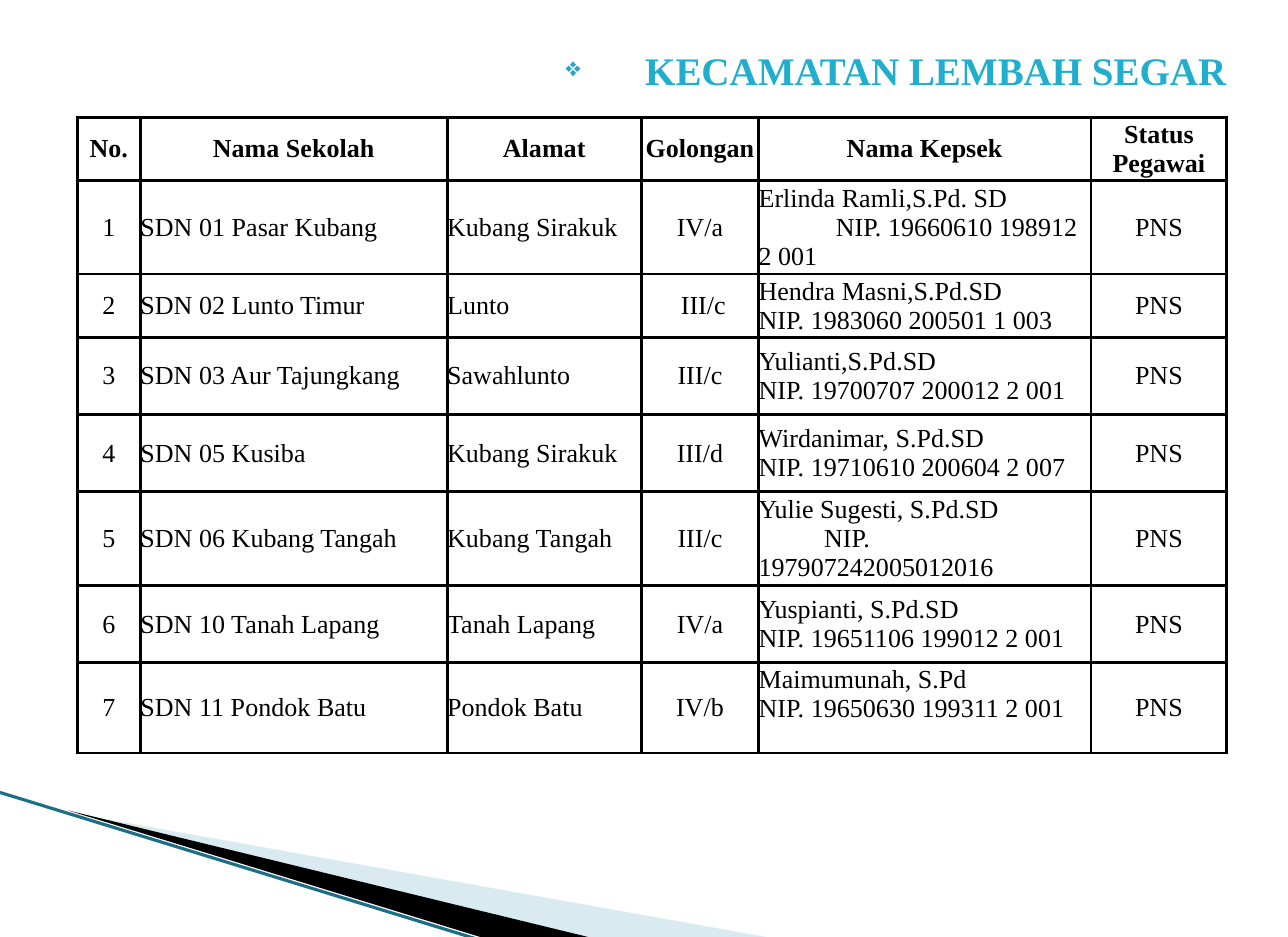
from lxml import etree
from pptx import Presentation
from pptx.dml.color import RGBColor
from pptx.enum.shapes import MSO_CONNECTOR
from pptx.enum.text import MSO_ANCHOR, PP_ALIGN
from pptx.oxml.ns import qn
from pptx.util import Inches, Pt

LEFT, CENTER, RIGHT = PP_ALIGN.LEFT, PP_ALIGN.CENTER, PP_ALIGN.RIGHT
MIDDLE = MSO_ANCHOR.MIDDLE
STRAIGHT = MSO_CONNECTOR.STRAIGHT

FONT = "Times New Roman"
COLORS = {
    "title": "1FAECD",
    "bullet": "2DA2BF",
    "text": "000000",
    "border": "000000",
    "pale_wedge": "A0CBDC",
    "dark_wedge": "000000",
    "edge": "1C6E87",
}

TITLE = "KECAMATAN LEMBAH SEGAR"
HEADERS = ["No.", "Nama Sekolah", "Alamat", "Golongan", "Nama Kepsek", "Status Pegawai"]
STATUS = "PNS"
SCHOOLS = [
    ("SDN 01 Pasar Kubang", "Kubang Sirakuk", "IV/a", "Erlinda Ramli,S.Pd. SD", "NIP. 19660610 198912 2 001"),
    ("SDN 02 Lunto Timur", "Lunto", " III/c", "Hendra Masni,S.Pd.SD", "NIP. 1983060 200501 1 003"),
    ("SDN 03 Aur Tajungkang", "Sawahlunto", "III/c", "Yulianti,S.Pd.SD", "NIP. 19700707 200012 2 001"),
    ("SDN 05 Kusiba", "Kubang Sirakuk", "III/d", "Wirdanimar, S.Pd.SD", "NIP. 19710610 200604 2 007"),
    ("SDN 06 Kubang Tangah", "Kubang Tangah", "III/c", "Yulie Sugesti, S.Pd.SD", "NIP. 197907242005012016"),
    ("SDN 10 Tanah Lapang", "Tanah Lapang", "IV/a", "Yuspianti, S.Pd.SD", "NIP. 19651106 199012 2 001"),
    ("SDN 11 Pondok Batu", "Pondok Batu", "IV/b", "Maimumunah, S.Pd", "NIP. 19650630 199311 2 001"),
]
NIP_INDENTS = {1: 0.33, 5: 0.28}
BOTTOM_MARGINS = {7: 0.12}
COLUMN_WIDTHS = [0.27, 1.31, 0.83, 0.5, 1.42, 0.58]
ROW_HEIGHTS = [0.27, 0.4, 0.27, 0.33, 0.33, 0.38, 0.33, 0.37]
COLUMN_ALIGNMENTS = [CENTER, LEFT, LEFT, CENTER, LEFT, CENTER]
HEAD_COLUMN = 4

WEDGES = [
    ("pale_wedge", 40, [(0.3, 3.47), (3.27, 4), (2.51, 4)]),
    ("dark_wedge", 100, [(0.29, 3.46), (2.51, 4), (2.05, 4)]),
]
EDGE = [(-0.01, 3.38), (2.04, 4.01)]


def rgb(name):
    return RGBColor.from_string(COLORS[name])


def write(frame, text, size=8, color="text", bold=False, align=LEFT, margins=(0, 0, 0, 0),
          indent=0, hanging=0, bullet=None):
    frame.word_wrap = True
    frame.margin_left, frame.margin_top, frame.margin_right, frame.margin_bottom = map(Inches, margins)
    for index, line in enumerate(text.split("\n")):
        paragraph = frame.add_paragraph() if index else frame.paragraphs[0]
        properties = paragraph._p.get_or_add_pPr()
        if indent and index:
            properties.set("indent", str(Inches(indent)))
        if bullet:
            properties.set("marL", str(Inches(hanging)))
            properties.set("indent", str(-Inches(hanging)))
            bullet_color = etree.SubElement(properties, qn("a:buClr"))
            etree.SubElement(bullet_color, qn("a:srgbClr"), val=COLORS["bullet"])
            etree.SubElement(properties, qn("a:buSzPct"), val="68000")
            etree.SubElement(properties, qn("a:buChar"), char=bullet)
        paragraph.alignment = align
        run = paragraph.add_run()
        run.text = line
        run.font.name = FONT
        run.font.size = Pt(size)
        run.font.bold = bold
        run.font.color.rgb = rgb(color)


def add_borders(cell):
    properties = cell._tc.get_or_add_tcPr()
    for side in ("lnL", "lnR", "lnT", "lnB"):
        border = etree.SubElement(properties, qn(f"a:{side}"), w=str(Pt(1)))
        fill = etree.SubElement(border, qn("a:solidFill"))
        etree.SubElement(fill, qn("a:srgbClr"), val=COLORS["border"])


def add_wedge(slide, color, opacity, points):
    corners = [(Inches(x), Inches(y)) for x, y in points]
    builder = slide.shapes.build_freeform(*corners[0])
    builder.add_line_segments(corners[1:])
    wedge = builder.convert_to_shape()
    wedge.shadow.inherit = False
    wedge.line.fill.background()
    wedge.fill.solid()
    wedge.fill.fore_color.rgb = rgb(color)
    if opacity < 100:
        fill_color = wedge._element.spPr.find(".//" + qn("a:srgbClr"))
        etree.SubElement(fill_color, qn("a:alpha"), val=str(opacity * 1000))


def add_edge(slide):
    (x1, y1), (x2, y2) = EDGE
    edge = slide.shapes.add_connector(STRAIGHT, Inches(x1), Inches(y1), Inches(x2), Inches(y2))
    edge.line.color.rgb = rgb("edge")
    edge.line.width = Pt(0.95)
    etree.SubElement(edge._element.spPr, qn("a:effectLst"))


def add_school_table(slide):
    rows = [HEADERS]
    for number, (school, address, grade, head, nip) in enumerate(SCHOOLS, 1):
        rows.append([str(number), school, address, grade, f"{head}\n{nip}", STATUS])
    table = slide.shapes.add_table(
        len(rows), len(HEADERS), Inches(0.33), Inches(0.5),
        Inches(sum(COLUMN_WIDTHS)), Inches(sum(ROW_HEIGHTS))).table
    table.first_row = table.horz_banding = False
    for column, width in zip(table.columns, COLUMN_WIDTHS):
        column.width = Inches(width)
    for row_index, (values, height) in enumerate(zip(rows, ROW_HEIGHTS)):
        table.rows[row_index].height = Inches(height)
        is_header = row_index == 0
        for column_index, value in enumerate(values):
            cell = table.cell(row_index, column_index)
            add_borders(cell)
            cell.fill.background()
            cell.vertical_anchor = MIDDLE
            write(cell.text_frame, value, bold=is_header,
                  align=CENTER if is_header else COLUMN_ALIGNMENTS[column_index],
                  indent=NIP_INDENTS.get(row_index, 0))
            cell.margin_left = cell.margin_right = cell.margin_top = 0
            is_head = column_index == HEAD_COLUMN
            cell.margin_bottom = Inches(BOTTOM_MARGINS.get(row_index, 0) if is_head else 0)


def main():
    presentation = Presentation()
    presentation.slide_width, presentation.slide_height = Inches(5.5), Inches(4)
    slide = presentation.slides.add_slide(presentation.slide_layouts[6])
    for wedge in WEDGES:
        add_wedge(slide, *wedge)
    add_edge(slide)
    title = slide.shapes.add_textbox(Inches(0.33), Inches(0.17), Inches(4.96), Inches(0.33))
    write(title.text_frame, TITLE, size=12, color="title", bold=True, align=RIGHT,
          margins=(0.05, 0.03, 0.05, 0.03), hanging=0.34, bullet="❖")
    add_school_table(slide)
    presentation.save("out.pptx")


if __name__ == "__main__":
    main()
